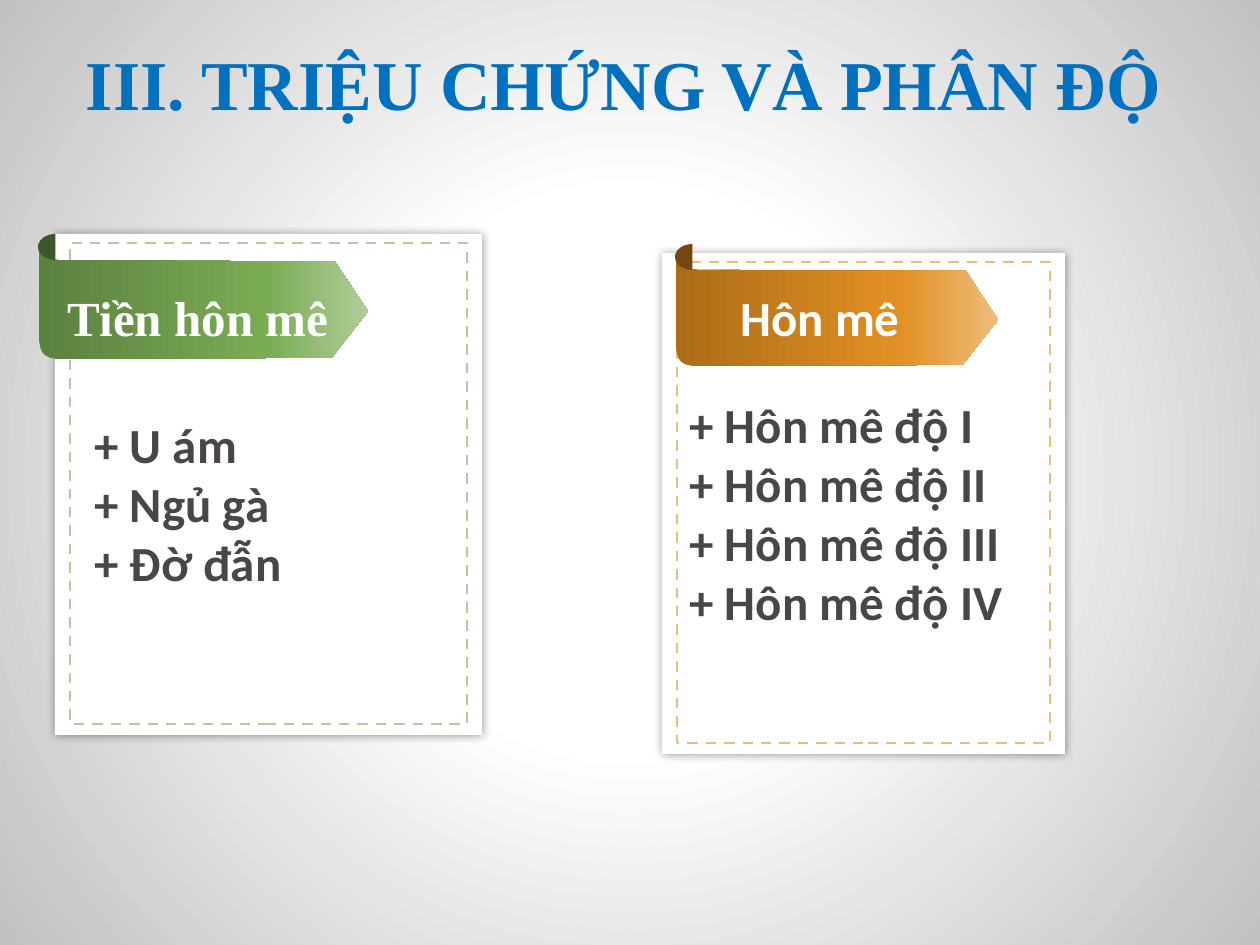
import pptx
import pptx.util
import pptx.dml.color
import pptx.enum.dml
import pptx.enum.shapes
import pptx.enum.text
import pptx.oxml
import pptx.oxml.ns

RGBColor = pptx.dml.color.RGBColor
SHAPE = pptx.enum.shapes.MSO_SHAPE
ALIGN = pptx.enum.text.PP_ALIGN

SCALE = 914400 // 126
WHITE = RGBColor(0xFF, 0xFF, 0xFF)
SILVER = RGBColor(0xC1, 0xC1, 0xC1)
BLACK = RGBColor(0, 0, 0)
BLUE = RGBColor(0x00, 0x70, 0xC0)
CHARCOAL = RGBColor(0x4A, 0x46, 0x44)
GREENS = [RGBColor(0x5B, 0x81, 0x3F), RGBColor(0x7A, 0xAC, 0x54), RGBColor(0xAF, 0xCD, 0x98)]
ORANGES = [RGBColor(0xAC, 0x6C, 0x17), RGBColor(0xE1, 0x90, 0x23), RGBColor(0xED, 0xBC, 0x7B)]
DARK_GREEN = RGBColor(0x3D, 0x56, 0x2A)
DARK_ORANGE = RGBColor(0x72, 0x48, 0x10)
SERIF = "Times New Roman"
SANS = "Calibri"


def px(*lengths):
    return [length * SCALE for length in lengths]


def add_xml(parent, tag, **attributes):
    element = pptx.oxml.parse_xml(f"<a:{tag} {pptx.oxml.ns.nsdecls('a')}/>")
    for name, value in attributes.items():
        element.set(name, str(value))
    parent.append(element)
    return element


def curve(start, first, second, end, steps=8):
    points = []
    for step in range(1, steps + 1):
        t = step / steps
        weights = ((1 - t) ** 3, 3 * t * (1 - t) ** 2, 3 * t * t * (1 - t), t ** 3)
        corners = (start, first, second, end)
        points.append(tuple(sum(w * c[axis] for w, c in zip(weights, corners)) for axis in (0, 1)))
    return points


RIBBON = (
    [(0.06, 1), (0.89, 0.99), (1, 0.59), (0.9, 0.16), (0.1, 0.15)]
    + curve((0.1, 0.15), (0.06, 0.15), (0.01, 0.16), (0, 0))
    + [(0, 0.79)]
    + curve((0, 0.79), (0, 0.97), (0.02, 0.99), (0.06, 1))
)


class SlideBuilder:
    def __init__(self, deck):
        self.slide = deck.slides.add_slide(deck.slide_layouts[6])
        self.shapes = self.slide.shapes

    def gradient(self, fill, owner, stops):
        fill.gradient()
        element = next(owner.iter(pptx.oxml.ns.qn("a:gradFill")))
        for child in list(element):
            element.remove(child)
        stop_list = add_xml(element, "gsLst")
        for position, color in stops:
            stop = add_xml(stop_list, "gs", pos=position * 1000)
            add_xml(stop, "srgbClr", val=color)
        return element

    def background(self, stops):
        element = self.gradient(self.slide.background.fill, self.slide.element, stops)
        circle = add_xml(element, "path", path="circle")
        add_xml(circle, "fillToRect", l=50000, t=50000, r=50000, b=50000)

    def shape(self, kind, left, top, width, height, fill=None):
        shape = self.shapes.add_shape(kind, *px(left, top, width, height))
        shape.shadow.inherit = False
        shape.line.fill.background()
        if fill is None:
            shape.fill.background()
        else:
            shape.fill.solid()
            shape.fill.fore_color.rgb = fill
        return shape

    def card(self, left, top, width, height, border):
        sheet = self.shape(SHAPE.RECTANGLE, left, top, width, height, WHITE)
        effects = sheet.element.spPr.find(pptx.oxml.ns.qn("a:effectLst"))
        shadow = add_xml(effects, "outerShdw", blurRad=pptx.util.Pt(5), dist=0, dir=0, algn="ctr")
        add_xml(add_xml(shadow, "srgbClr", val=BLACK), "alpha", val=40000)
        frame = self.shape(SHAPE.RECTANGLE, left + 15, top + 9, width - 30, height - 20)
        frame.line.color.rgb = border
        frame.line.width = pptx.util.Pt(1.5)
        frame.line.dash_style = pptx.enum.dml.MSO_LINE.DASH

    def ribbon(self, left, top, width, height, colors, fold_color):
        points = [((left + x * width) * SCALE, (top + y * height) * SCALE) for x, y in RIBBON]
        builder = self.shapes.build_freeform(*points[0])
        builder.add_line_segments(points[1:], close=True)
        banner = builder.convert_to_shape()
        banner.shadow.inherit = False
        banner.line.fill.background()
        element = self.gradient(banner.fill, banner.element.spPr, zip((0, 69, 100), colors))
        add_xml(element, "lin", ang=0, scaled=0)
        fold = self.shape(SHAPE.PIE, left - 1, top - 9, 35, 26, fold_color)
        fold.adjustments[0] = 54
        fold.adjustments[1] = 162

    def text(self, left, top, width, height, lines, size, font, color,
             align=ALIGN.LEFT, wrap=True):
        box = self.shapes.add_textbox(*px(left, top, width, height))
        frame = box.text_frame
        frame.word_wrap = wrap
        frame.auto_size = pptx.enum.text.MSO_AUTO_SIZE.SHAPE_TO_FIT_TEXT
        frame.vertical_anchor = pptx.enum.text.MSO_ANCHOR.MIDDLE
        frame.text = "\n".join(lines)
        for para in frame.paragraphs:
            para.alignment = align
            para.font.size = pptx.util.Pt(size)
            para.font.name = font
            para.font.bold = True
            para.font.color.rgb = color


def main():
    deck = pptx.Presentation()
    deck.slide_width, deck.slide_height = px(1260, 945)
    page = SlideBuilder(deck)
    page.background([(35, WHITE), (100, SILVER)])
    page.text(67, 34, 1113, 97, ["III. TRIỆU CHỨNG VÀ PHÂN ĐỘ"], 40, SERIF, BLUE,
              ALIGN.CENTER, wrap=False)

    page.card(55, 234, 427, 501, GREENS[-1])
    page.ribbon(39, 243, 329, 116, GREENS, DARK_GREEN)
    page.card(662, 253, 403, 501, ORANGES[-1])
    page.ribbon(676, 253, 322, 113, ORANGES, DARK_ORANGE)

    precoma = ["U ám", "Ngủ gà", "Đờ đẫn"]
    coma = [f"Hôn mê độ {grade}" for grade in ("I", "II", "III", "IV")]
    page.text(82, 408, 261, 190, [f"+ {item}" for item in precoma], 28, SANS, CHARCOAL)
    page.text(677, 387, 426, 251, [f"+ {item}" for item in coma], 28, SANS, CHARCOAL)
    page.text(55, 281, 286, 72, ["Tiền hôn mê"], 28, SERIF, WHITE, ALIGN.CENTER)
    page.text(706, 281, 228, 72, ["Hôn mê"], 28, SANS, WHITE, ALIGN.CENTER)
    deck.save("out.pptx")


if __name__ == "__main__":
    main()
